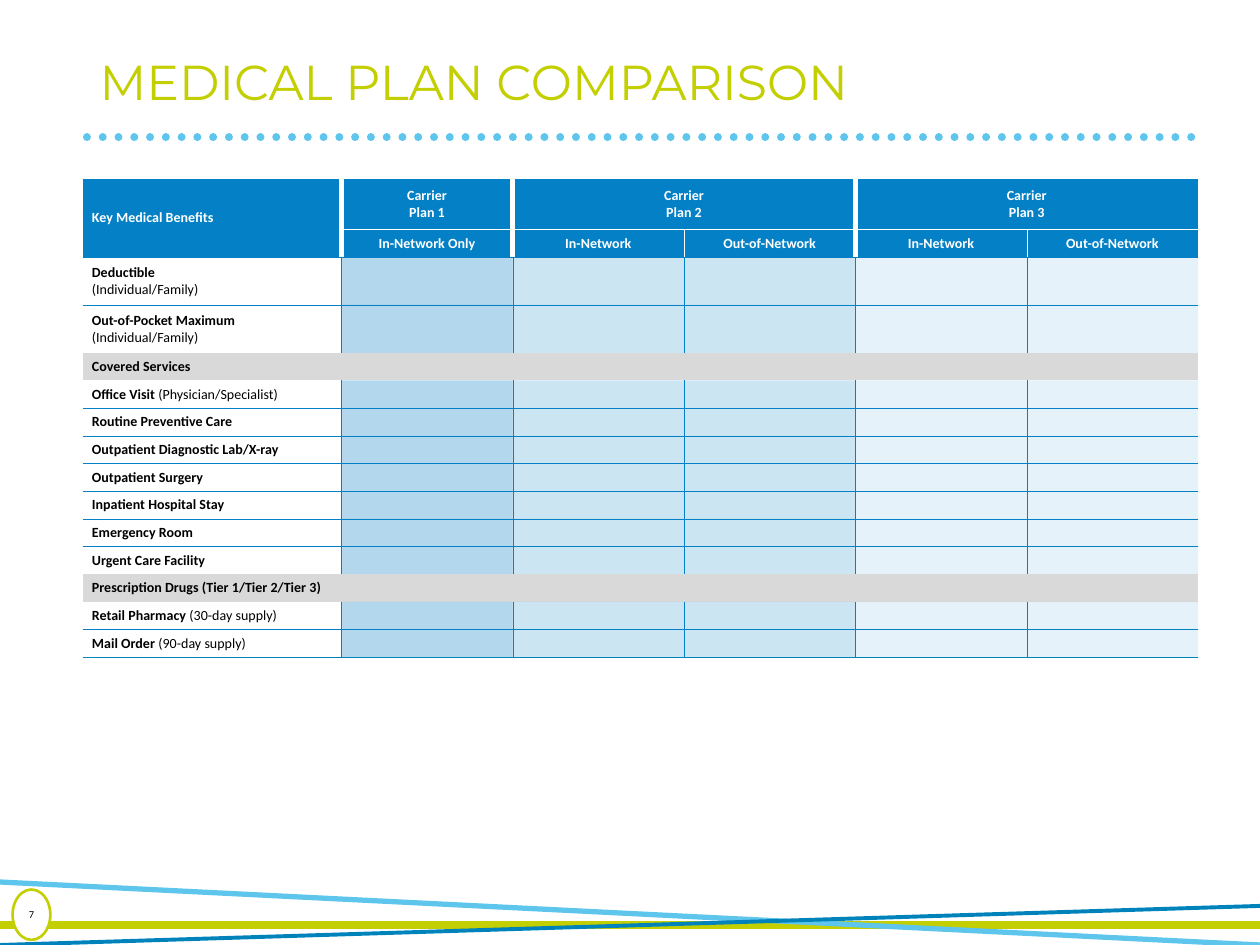
from lxml import etree
from pptx import Presentation
from pptx.dml.color import RGBColor
from pptx.enum.dml import MSO_LINE
from pptx.enum.shapes import MSO_CONNECTOR, MSO_SHAPE
from pptx.enum.text import MSO_ANCHOR, PP_ALIGN
from pptx.oxml.ns import qn
from pptx.util import Inches, Pt

STRAIGHT = MSO_CONNECTOR.STRAIGHT
OVAL = MSO_SHAPE.OVAL
ROUND_DOT = MSO_LINE.ROUND_DOT
MIDDLE = MSO_ANCHOR.MIDDLE
LEFT, CENTER = PP_ALIGN.LEFT, PP_ALIGN.CENTER

THEME = {
    "lime": "C3CF00", "sky": "5EC5ED", "blue": "0481C6", "deep_blue": "0083BB",
    "gray": "D9D9D9", "white": "FFFFFF", "black": "000000",
    "title_font": "Montserrat", "body_font": "Calibri",
    "title_size": 28, "table_size": 8, "number_size": 6,
}


def add_run(paragraph, text, color, size, font=THEME["body_font"], bold=False):
    run = paragraph.add_run()
    run.text = text
    for name, value in {"name": font, "size": Pt(size), "bold": bold}.items():
        setattr(run.font, name, value)
    run.font.color.rgb = RGBColor.from_string(THEME[color])


def set_borders(cell, borders):
    """Draw each side given as (color, points); None hides that side."""
    properties = cell._tc.get_or_add_tcPr()
    for side in "LRTB":
        border = etree.SubElement(properties, qn(f"a:ln{side}"))
        if borders[side] is None:
            etree.SubElement(border, qn("a:noFill"))
            continue
        color, width = borders[side]
        border.set("w", str(Pt(width)))
        fill = etree.SubElement(border, qn("a:solidFill"))
        etree.SubElement(fill, qn("a:srgbClr"), val=THEME[color])


presentation = Presentation()
presentation.slide_width, presentation.slide_height = Inches(10), Inches(7.5)
slide = presentation.slides.add_slide(presentation.slide_layouts[5])

# Dotted rule below the title, then the crossing footer lines
lines = [
    (0.69, 1.09, 9.49, 1.09, "sky", 4.5, ROUND_DOT),
    (0, 7.34, 10, 7.34, "lime", 4.5, None),
    (10, 7.5, 0, 7, "sky", 3, None),
    (0, 7.5, 10, 7.19, "deep_blue", 2.25, None),
]
for x1, y1, x2, y2, color, width, dash in lines:
    connector = slide.shapes.add_connector(STRAIGHT, Inches(x1), Inches(y1), Inches(x2), Inches(y2))
    connector.line.color.rgb = RGBColor.from_string(THEME[color])
    connector.line.width = Pt(width)
    if dash:
        connector.line.dash_style = dash
        connector._element.spPr.find(qn("a:ln")).set("cap", "rnd")
    etree.SubElement(connector._element.spPr, qn("a:effectLst"))

title = slide.shapes.title
title.left, title.top, title.width, title.height = (Inches(n) for n in (0.69, 0.4, 8.62, 0.55))
title.text_frame.vertical_anchor = MIDDLE
title_paragraph = title.text_frame.paragraphs[0]
title_paragraph.alignment = LEFT
title_paragraph.line_spacing = 0.9
add_run(title_paragraph, "MEDICAL PLAN COMPARISON", "lime", THEME["title_size"], THEME["title_font"])

badge = slide.shapes.add_shape(OVAL, Inches(0.1), Inches(7.06), Inches(0.3), Inches(0.4))
badge.shadow.inherit = False
badge.fill.solid()
badge.fill.fore_color.rgb = RGBColor.from_string(THEME["white"])
badge.line.color.rgb = RGBColor.from_string(THEME["lime"])
badge.line.width = Pt(1.5)
frame = badge.text_frame
for side in ("left", "right", "top", "bottom"):
    setattr(frame, f"margin_{side}", 0)
frame.vertical_anchor = MIDDLE
frame.paragraphs[0].alignment = CENTER
add_run(frame.paragraphs[0], "7", "black", THEME["number_size"])

# Each cell is a list of paragraphs, each paragraph a list of (text, bold) runs
header_rows = [
    ["Key Medical Benefits", "Carrier\nPlan 1", "Carrier\nPlan 2", "", "Carrier\nPlan 3", ""],
    ["", "In-Network Only"] + ["In-Network", "Out-of-Network"] * 2,
]
per_person = [("(Individual/Family)", False)]
benefits = [
    [[("Deductible", True)], per_person],
    [[("Out-of-Pocket Maximum", True)], per_person],
    [[("Covered Services", True)]],
    [[("Office Visit ", True), ("(Physician/Specialist)", False)]],
    [[("Routine Preventive Care", True)]],
    [[("Outpatient Diagnostic Lab/X-ray", True)]],
    [[("Outpatient Surgery", True)]],
    [[("Inpatient Hospital Stay", True)]],
    [[("Emergency Room", True)]],
    [[("Urgent Care Facility", True)]],
    [[("Prescription Drugs (Tier 1/Tier 2/Tier 3)", True)]],
    [[("Retail Pharmacy ", True), ("(30-day supply)", False)]],
    [[("Mail Order ", True), ("(90-day supply)", False)]],
]
content = [[[[(line, True)] for line in text.split("\n")] if text else [] for text in row]
           for row in header_rows]
content += [[label] + [[]] * 5 for label in benefits]
section_rows = (4, 12)
column_widths = [2.05] + [1.36] * 5
row_heights = [0.4, 0.22, 0.38, 0.38] + [0.22] * 11
plan_opacity = [None, 30, 20, 20, 10, 10]

# Borders, listed by grid line
rule, gap, hairline = ("blue", 0.25), ("white", 3), ("white", 0.25)
row_lines = [None, hairline] + [rule] * 13 + [("deep_blue", 0.5)]
for row in section_rows:
    row_lines[row] = row_lines[row + 1] = None
column_lines = [
    [None, gap, gap, gap, gap, None, None],
    [None, gap, gap, hairline, gap, hairline, None],
] + [[None] + [rule] * 5 + [None]] * 13
for row in section_rows:
    column_lines[row] = [None] * 7

table_shape = slide.shapes.add_table(
    len(content), len(column_widths), Inches(0.66), Inches(1.42),
    Inches(sum(column_widths)), Inches(sum(row_heights)))
table = table_shape.table
table.first_row = table.horz_banding = False
for column, width in zip(table.columns, column_widths):
    column.width = Inches(width)
for table_row, height in zip(table.rows, row_heights):
    table_row.height = Inches(height)

for row, cells in enumerate(content):
    is_header = row < len(header_rows)
    for column, paragraphs in enumerate(cells):
        cell = table.cell(row, column)
        cell.vertical_anchor = MIDDLE
        cell.margin_left = cell.margin_right = Inches(0.07)
        cell.margin_top = cell.margin_bottom = Inches(0.04 if is_header else 0.03)
        borders = {"L": column_lines[row][column], "R": column_lines[row][column + 1],
                   "T": row_lines[row], "B": row_lines[row + 1]}
        if column == 0 and is_header:
            borders.update(T=None, B=rule)
        set_borders(cell, borders)

        fill = "blue" if is_header else "gray" if row in section_rows else "white"
        opacity = None if is_header or row in section_rows else plan_opacity[column]
        cell.fill.solid()
        cell.fill.fore_color.rgb = RGBColor.from_string(THEME["blue" if opacity else fill])
        if opacity:
            fill_color = cell._tc.tcPr.find(qn("a:solidFill")).find(qn("a:srgbClr"))
            etree.SubElement(fill_color, qn("a:alpha"), val=str(opacity * 1000))

        frame = cell.text_frame
        for index, runs in enumerate(paragraphs):
            paragraph = frame.paragraphs[0] if index == 0 else frame.add_paragraph()
            paragraph.alignment = CENTER if column else LEFT
            for text, bold in runs:
                add_run(paragraph, text, "white" if is_header else "black", THEME["table_size"], bold=bold)
        if not paragraphs:  # keeps an empty cell from growing its row
            etree.SubElement(frame.paragraphs[0]._p, qn("a:endParaRPr"), sz=str(THEME["table_size"] * 100))

merges = [(0, 0, 1, 0), (0, 2, 0, 3), (0, 4, 0, 5)] + [(row, 0, row, 5) for row in section_rows]
for top, left, bottom, right in merges:
    table.cell(top, left).merge(table.cell(bottom, right))

presentation.save("out.pptx")
